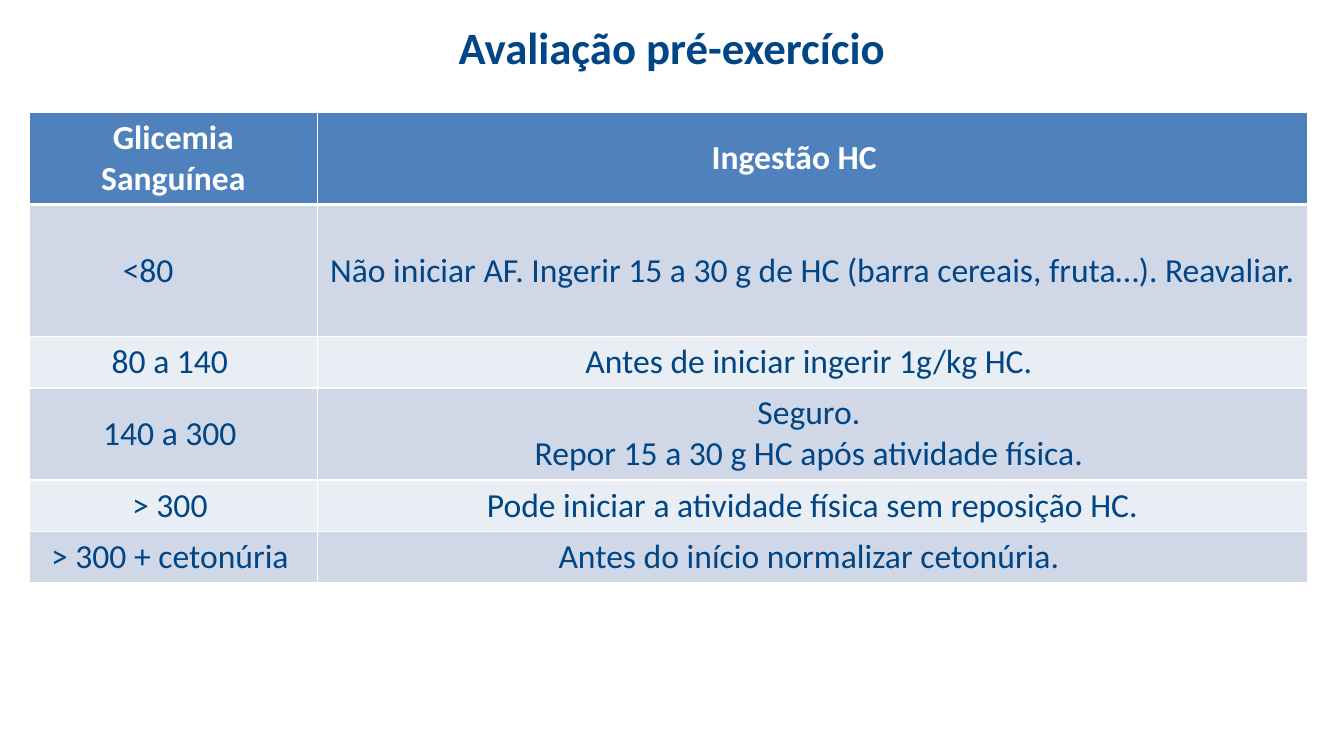
from dataclasses import dataclass
from lxml.etree import SubElement
from pptx import Presentation
from pptx.dml.color import RGBColor
from pptx.enum.text import MSO_ANCHOR, PP_ALIGN
from pptx.oxml.ns import qn
from pptx.util import Pt

# Content: (row height, cells); a cell is (lines, extra right margin)
TITLE = "Avaliação pré-exercício"
ROWS = [
    (65.6, [(["Glicemia", "Sanguínea"], 0), (["Ingestão HC"], 26)]),
    (94.6, [(["<80"], 36),
            (["Não iniciar AF. Ingerir 15 a 30 g de HC (barra cereais, fruta…). Reavaliar."], 0)]),
    (36.5, [(["80 a 140"], 5), (["Antes de iniciar ingerir 1g/kg HC."], 5)]),
    (65.6, [(["140 a 300"], 5),
            (["Seguro.", "Repor 15 a 30 g HC após atividade física."], 5)]),
    (36.5, [(["> 300"], 5), (["Pode iniciar a atividade física sem reposição HC."], 0)]),
    (36.5, [(["> 300 + cetonúria"], 5), (["Antes do início normalizar cetonúria."], 5)]),
]
COL_WIDTHS = (205.9, 707)
TABLE_LEFT, TABLE_TOP = 20.9, 80.2
MARGIN = 7.2


@dataclass(frozen=True)
class Theme:
    font: str = "Calibri"
    title_size: int = 32
    cell_size: int = 24
    ink: str = "004586"
    white: str = "FFFFFF"
    header: str = "4F81BD"
    bands: tuple = ("E9EDF4", "D0D8E8")


THEME = Theme()


def rgb(code):
    return RGBColor.from_string(code)


def write(tf, lines, size, color, bold):
    """Fill a text frame with centred lines."""
    for i, line in enumerate(lines):
        p = tf.paragraphs[0] if i == 0 else tf.add_paragraph()
        p.alignment = PP_ALIGN.CENTER
        r = p.add_run()
        r.text = line
        r.font.name = THEME.font
        r.font.size = Pt(size)
        r.font.bold = bold
        r.font.color.rgb = rgb(color)


def set_borders(cell, widths):
    """Draw white borders; they precede the fill in the cell properties."""
    tc_pr = cell._tc.get_or_add_tcPr()
    for side, width in widths.items():
        ln = SubElement(tc_pr, qn(f"a:ln{side}"), w=str(Pt(width)))
        fill = SubElement(ln, qn("a:solidFill"))
        SubElement(fill, qn("a:srgbClr"), val=THEME.white)


def add_title(s):
    sp = s.shapes.title
    sp.left, sp.top, sp.width, sp.height = Pt(48), Pt(12), Pt(864), Pt(47.5)
    tf = sp.text_frame
    tf.word_wrap = True
    tf.vertical_anchor = MSO_ANCHOR.MIDDLE
    write(tf, [TITLE], THEME.title_size, THEME.ink, True)
    tf.paragraphs[0].line_spacing = 0.9


def add_glycemia_table(s):
    height = sum(h for h, _ in ROWS)
    table = s.shapes.add_table(
        len(ROWS), len(COL_WIDTHS), Pt(TABLE_LEFT), Pt(TABLE_TOP),
        Pt(sum(COL_WIDTHS)), Pt(height)).table
    for column, width in zip(table.columns, COL_WIDTHS):
        column.width = Pt(width)
    for i, (row_height, cells) in enumerate(ROWS):
        table.rows[i].height = Pt(row_height)
        is_header = i == 0
        for j, (lines, extra) in enumerate(cells):
            cell = table.cell(i, j)
            cell.vertical_anchor = MSO_ANCHOR.MIDDLE
            cell.margin_left, cell.margin_right = Pt(MARGIN), Pt(MARGIN + extra)
            set_borders(cell, {"L": 1, "R": 1, "T": 3 if i == 1 else 1,
                               "B": 3 if is_header else 1})
            cell.fill.solid()
            cell.fill.fore_color.rgb = rgb(THEME.header if is_header else THEME.bands[i % 2])
            write(cell.text_frame, lines, THEME.cell_size,
                  THEME.white if is_header else THEME.ink, is_header)


def main():
    prs = Presentation()
    prs.slide_width, prs.slide_height = Pt(960), Pt(540)
    s = prs.slides.add_slide(prs.slide_layouts[5])
    add_title(s)
    add_glycemia_table(s)
    prs.save("out.pptx")


if __name__ == "__main__":
    main()
